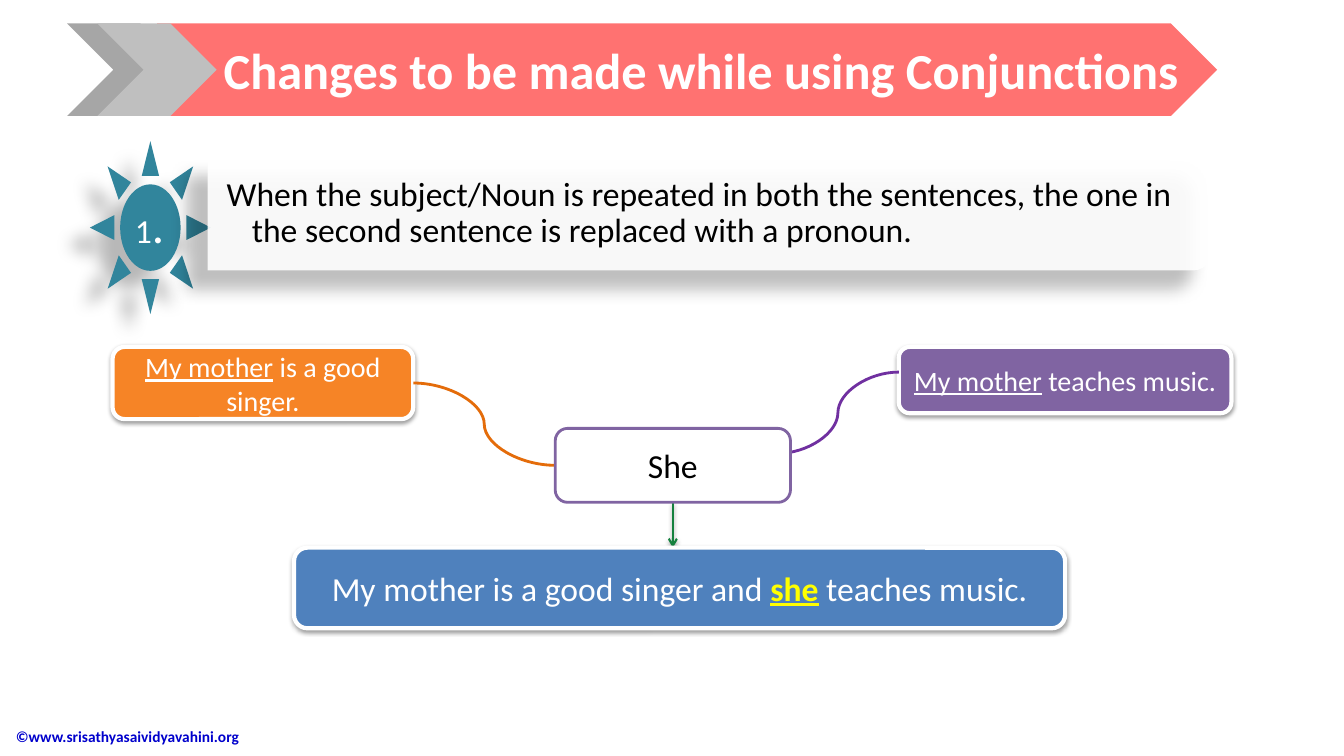
from dataclasses import dataclass
from typing import NamedTuple, Optional

from lxml import etree
from pptx import Presentation
from pptx import util as u
from pptx.dml.color import RGBColor
from pptx.enum import shapes, text
from pptx.oxml import ns

HEX = {
    "white": "FFFFFF", "black": "000000", "coral": "FF7271",
    "dark": "A6A6A6", "light": "BFBFBF", "teal": "31859C",
    "orange": "F68426", "rust": "E46C0A", "purple": "8064A2",
    "violet": "7030A0", "green": "15813E", "blue": "4F81BD",
    "yellow": "FFFF00", "navy": "0000CC",
}
FONT = "Calibri"
KIND = shapes.MSO_SHAPE
LINK = shapes.MSO_CONNECTOR
ALIGN = text.PP_ALIGN

# The slide is a grid of 16 columns by 9 rows of square cells
WIDE, HIGH = u.Inches(13.333), u.Inches(7.5)
CELL = HIGH / 9


class Area(NamedTuple):
    col: float
    row: float
    cols: float
    rows: float


class Piece(NamedTuple):
    words: str
    size: float
    color: str = "white"
    bold: bool = False
    under: bool = False


class Shade(NamedTuple):
    alpha: int
    blur: float
    dist: float
    angle: int


@dataclass
class Block:
    kind: KIND
    area: Area
    fill: str
    line: Optional[str] = None
    width: float = 3
    shade: Optional[Shade] = None
    turn: int = 0
    alpha: int = 100
    pieces: tuple[Piece, ...] = ()


SOFT = Shade(38, 3.1, 1.6, 90)
DEEP = Shade(28, 11.8, 19.7, 141)
THIN = Shade(35, 3.1, 1.8, 90)


def grid(*cells: float) -> list[int]:
    return [round(cell * CELL) for cell in cells]


def tint(name: str) -> RGBColor:
    return RGBColor.from_string(HEX[name])


def add(parent, tag: str, **attrs):
    return etree.SubElement(parent, ns.qn(tag), {k: str(v) for k, v in attrs.items()})


def cast(props, shade: Shade) -> None:
    effect = props.find(ns.qn("a:effectLst"))
    outer = add(effect, "a:outerShdw", blurRad=u.Pt(shade.blur),
                dist=u.Pt(shade.dist), dir=shade.angle * 60000,
                algn="ctr", rotWithShape=0)
    color = add(outer, "a:srgbClr", val=HEX["black"])
    add(color, "a:alpha", val=shade.alpha * 1000)


def write(frame, pieces: tuple[Piece, ...], align=ALIGN.CENTER, inset=(0.1, 0.05, 0.1, 0.05)):
    frame.word_wrap = True
    frame.auto_size = text.MSO_AUTO_SIZE.NONE
    frame.vertical_anchor = text.MSO_ANCHOR.MIDDLE
    (frame.margin_left, frame.margin_top,
     frame.margin_right, frame.margin_bottom) = map(u.Inches, inset)
    para = frame.paragraphs[0]
    para.alignment = align
    for piece in pieces:
        run = para.add_run()
        run.text = piece.words
        font = run.font
        font.name, font.size = FONT, u.Pt(piece.size)
        font.bold, font.underline = piece.bold, piece.under
        font.color.rgb = tint(piece.color)
    return para


def draw(slide, block: Block):
    shape = slide.shapes.add_shape(block.kind, *grid(*block.area))
    shape.shadow.inherit = False
    shape.rotation = block.turn
    shape.fill.solid()
    shape.fill.fore_color.rgb = tint(block.fill)
    if block.alpha < 100:
        color = shape._element.spPr.find(".//" + ns.qn("a:srgbClr"))
        add(color, "a:alpha", val=block.alpha * 1000)
    if block.line:
        shape.line.color.rgb = tint(block.line)
        shape.line.width = u.Pt(block.width)
    else:
        shape.line.fill.background()
    if block.shade:
        cast(shape._element.spPr, block.shade)
    if block.pieces:
        write(shape.text_frame, block.pieces)
    return shape


def label(slide, area: Area, *pieces: Piece, **style):
    box = slide.shapes.add_textbox(*grid(*area))
    return write(box.text_frame, pieces, **style)


def join(slide, kind: LINK, ends: tuple, color: str, width: float):
    link = slide.shapes.add_connector(kind, *grid(*ends))
    link.line.color.rgb = tint(color)
    link.line.width = u.Pt(width)
    add(link._element.spPr, "a:effectLst")
    return link


def main() -> None:
    deck = Presentation()
    deck.slide_width, deck.slide_height = WIDE, HIGH
    slide = deck.slides.add_slide(deck.slide_layouts[5])
    tree = slide.shapes._spTree

    # Footer
    label(slide, Area(0.07, 8.52, 4.24, 0.49),
          Piece("©www.srisathyasaividyavahini.org", 11, "navy", True), align=ALIGN.LEFT)

    # Sentence cards
    card = KIND.ROUNDED_RECTANGLE
    first, second, she, whole = [draw(slide, block) for block in (
        Block(card, Area(1.34, 4.13, 3.58, 0.86), "orange", "white", shade=SOFT,
              pieces=(Piece("My mother", 20, under=True), Piece(" is a good singer.", 20))),
        Block(card, Area(10.7, 4.13, 3.96, 0.79), "purple", "white", shade=SOFT,
              pieces=(Piece("My mother", 20, under=True), Piece(" teaches music.", 20))),
        Block(card, Area(6.61, 5.1, 2.8, 0.88), "white", "purple", 2,
              pieces=(Piece("She", 24, "black"),)),
        Block(card, Area(3.5, 6.52, 9.18, 0.96), "blue", "white", shade=SOFT,
              pieces=(Piece("My mother is a good singer and ", 24),
                      Piece("she", 24, "yellow", True, True),
                      Piece(" teaches music.", 24))),
    )]

    # Links between the cards
    left = join(slide, LINK.CURVE, (4.92, 4.56, 6.61, 5.54), "rust", 2)
    left.begin_connect(first, 3)
    left.end_connect(she, 1)
    join(slide, LINK.CURVE, (9.25, 5.4, 10.7, 4.43), "violet", 2)
    down = join(slide, LINK.STRAIGHT, (8.01, 5.98, 8.01, 6.52), "green", 1.5)
    down.begin_connect(she, 2)
    add(down.line._get_or_add_ln(), "a:tailEnd", type="arrow")
    cast(down._element.spPr, THIN)
    for top in (whole, she):
        tree.append(top._element)

    # Numbered rule
    draw(slide, Block(KIND.SUN, Area(0.76, 1.99, 2.06, 1.44), "teal", shade=DEEP, turn=90))
    mark = label(slide, Area(1.52, 2.35, 0.52, 0.73), Piece("1", 24), Piece(".", 35),
                 inset=(0.02,) * 4)
    draw(slide, Block(KIND.ROUND_2_SAME_RECTANGLE, Area(7.78, -3.43, 1.34, 11.96),
                      "white", shade=DEEP, turn=90, alpha=90))
    rule = label(slide, Area(2.47, 1.94, 11.89, 1.21),
                 Piece("When the subject/Noun is repeated in both the sentences, the one in "
                       "the second sentence is replaced with a pronoun.", 24, "black"),
                 align=ALIGN.LEFT, inset=(0.19, 0.02, 0.02, 0.02))
    mark.line_spacing = rule.line_spacing = 0.9
    hang = u.Inches(0.25)
    props = rule._p.get_or_add_pPr()
    props.set("marL", str(hang))
    props.set("indent", str(-hang))

    # Title banner
    for kind, col, cols, fill in (
        (KIND.CHEVRON, 0.8, 1.42, "dark"),
        (KIND.PENTAGON, 1.87, 12.62, "coral"),
        (KIND.CHEVRON, 1.16, 1.42, "light"),
    ):
        draw(slide, Block(kind, Area(col, 0.28, cols, 1.1), fill))
    title = slide.shapes.title
    title.left, title.top, title.width, title.height = grid(2.48, 0.28, 11.74, 1.1)
    write(title.text_frame,
          (Piece("Changes to be made while using Conjunctions", 36, bold=True),), inset=(0,) * 4)
    tree.append(title._element)

    deck.save("out.pptx")


if __name__ == "__main__":
    main()
